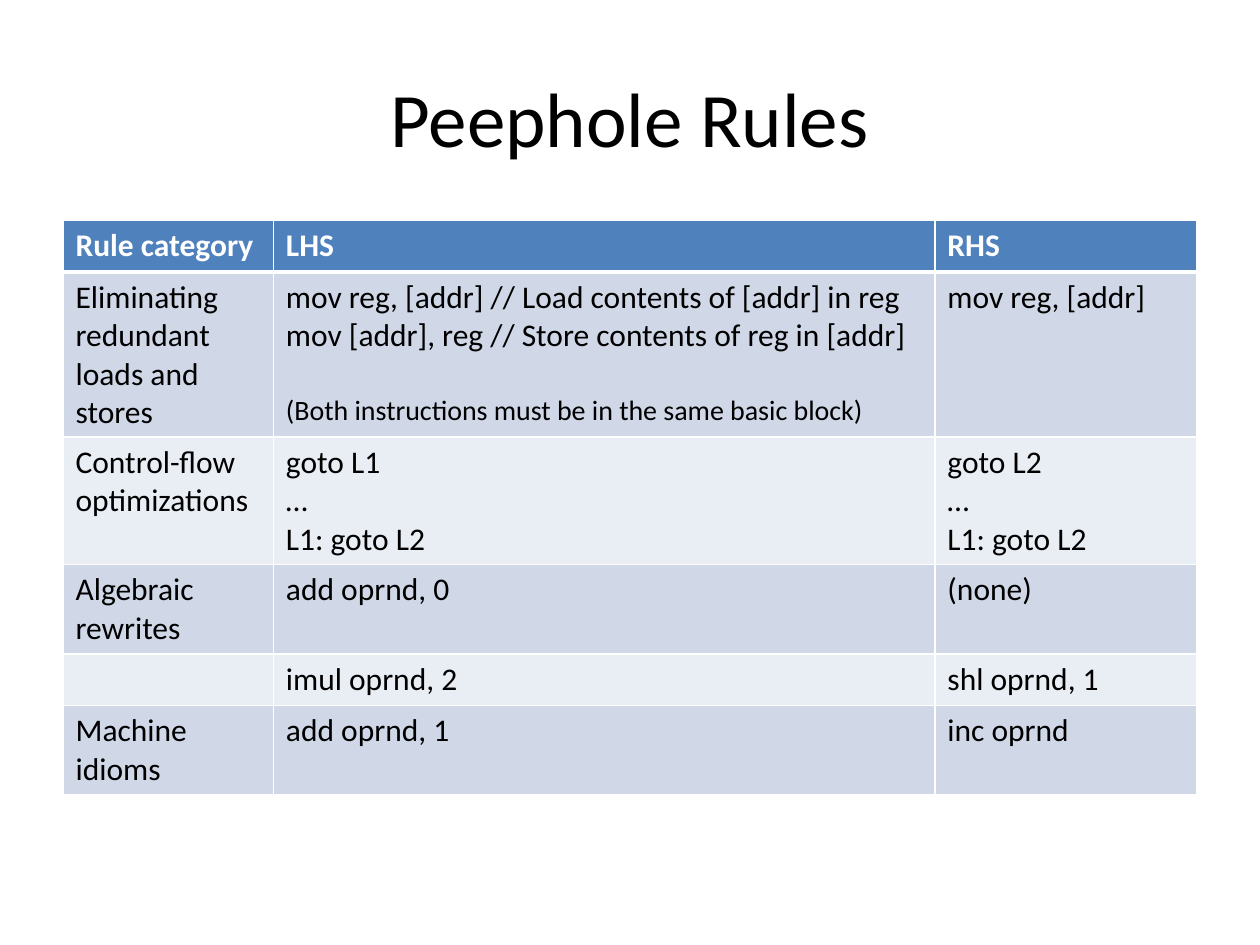
from lxml.etree import SubElement
from pptx import Presentation
from pptx.dml.color import RGBColor
from pptx.enum.text import MSO_ANCHOR, PP_ALIGN
from pptx.oxml.ns import qn
from pptx.util import Inches, Pt

FONT = "Calibri"
BLACK = RGBColor(0x00, 0x00, 0x00)
WHITE = RGBColor(0xFF, 0xFF, 0xFF)
HEADER_BLUE = RGBColor(0x4F, 0x81, 0xBD)
BAND_DARK = RGBColor(0xD0, 0xD8, 0xE8)
BAND_LIGHT = RGBColor(0xE9, 0xED, 0xF4)

COLUMN_WIDTHS = [1.67, 5.25, 2.08]
ROW_HEIGHTS = [0.41, 1.31, 1.01, 0.71, 0.41, 0.71]
NOTE = "(Both instructions must be in the same basic block)"
RULES = [
    ["Rule category", "LHS", "RHS"],
    ["Eliminating redundant loads and stores",
     "mov reg, [addr] // Load contents of [addr] in reg\n"
     "mov [addr], reg // Store contents of reg in [addr]\n" + NOTE,
     "mov reg, [addr]"],
    ["Control-flow optimizations", "goto L1\n…\nL1: goto L2", "goto L2\n…\nL1: goto L2"],
    ["Algebraic rewrites", "add oprnd, 0", "(none)"],
    ["", "imul oprnd, 2", "shl oprnd, 1"],
    ["Machine idioms", "add oprnd, 1", "inc oprnd"],
]


def add_run(paragraph, text, size, color, bold=False):
    run = paragraph.add_run()
    run.text = text
    run.font.name = FONT
    run.font.size = Pt(size)
    run.font.bold = bold
    run.font.color.rgb = color


def add_title(slide, left, top, width, height):
    text_frame = slide.shapes.add_textbox(left, top, width, height).text_frame
    text_frame.word_wrap = True
    text_frame.vertical_anchor = MSO_ANCHOR.MIDDLE
    paragraph = text_frame.paragraphs[0]
    paragraph.alignment = PP_ALIGN.CENTER
    add_run(paragraph, "Peephole Rules", 44, BLACK)


def set_borders(cell, bottom_width):
    """Draw white borders; call before the fill, which must follow them in the XML."""
    properties = cell._tc.get_or_add_tcPr()
    for side, width in (("L", 1), ("R", 1), ("T", 1), ("B", bottom_width)):
        line = SubElement(properties, qn(f"a:ln{side}"), w=str(Pt(width)))
        fill = SubElement(line, qn("a:solidFill"))
        SubElement(fill, qn("a:srgbClr"), val=str(WHITE))


def fill_cell(cell, text, is_header, background):
    set_borders(cell, 3 if is_header else 1)
    cell.fill.solid()
    cell.fill.fore_color.rgb = background
    if not text:
        return
    for index, line in enumerate(text.split("\n")):
        text_frame = cell.text_frame
        paragraph = text_frame.add_paragraph() if index else text_frame.paragraphs[0]
        if line == NOTE:
            paragraph.space_before = Pt(22)
        add_run(paragraph, line, 16 if line == NOTE else 18,
                WHITE if is_header else BLACK, is_header)


def add_rules_table(slide, left, top, width, height):
    table = slide.shapes.add_table(
        len(RULES), len(COLUMN_WIDTHS), left, top, width, height).table
    for column, column_width in zip(table.columns, COLUMN_WIDTHS):
        column.width = Inches(column_width)
    for row_index, (row, row_height) in enumerate(zip(table.rows, ROW_HEIGHTS)):
        row.height = Inches(row_height)
        is_header = row_index == 0
        band = BAND_DARK if row_index % 2 else BAND_LIGHT
        for cell, text in zip(row.cells, RULES[row_index]):
            fill_cell(cell, text, is_header, HEADER_BLUE if is_header else band)


def main():
    presentation = Presentation()
    presentation.slide_width = Inches(10)
    presentation.slide_height = Inches(7.5)
    slide = presentation.slides.add_slide(presentation.slide_layouts[6])
    add_title(slide, Inches(0.5), Inches(0.3), Inches(9), Inches(1.25))
    add_rules_table(slide, Inches(0.5), Inches(1.75),
                    Inches(sum(COLUMN_WIDTHS)), Inches(sum(ROW_HEIGHTS)))
    presentation.save("out.pptx")


if __name__ == "__main__":
    main()
